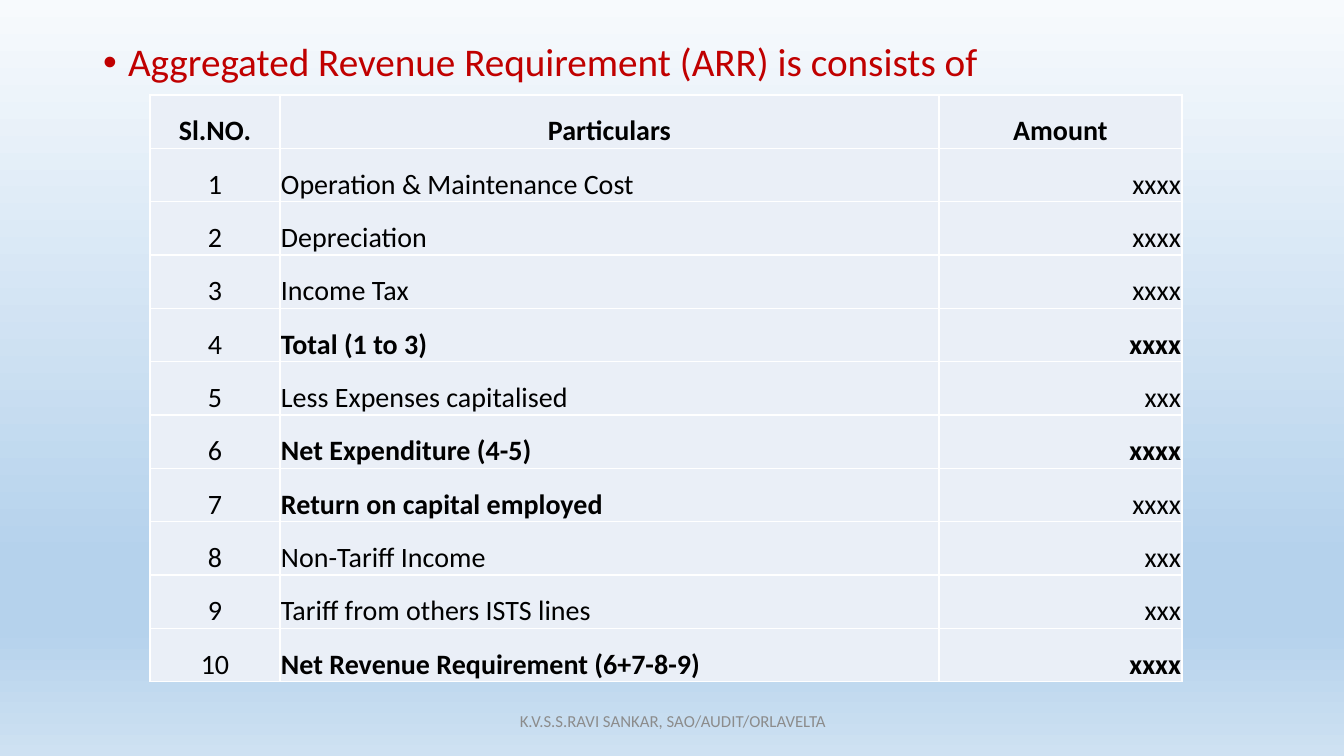
from dataclasses import dataclass

from lxml.etree import SubElement
from pptx import Presentation
from pptx.dml.color import RGBColor
from pptx.enum.text import MSO_ANCHOR, PP_ALIGN
from pptx.oxml.ns import qn
from pptx.util import Pt

HEADING = "Aggregated Revenue Requirement (ARR) is consists of"
COLUMNS = [
    ("Sl.NO.", 130, PP_ALIGN.CENTER),
    ("Particulars", 659, PP_ALIGN.LEFT),
    ("Amount", 243, PP_ALIGN.RIGHT),
]
ITEMS = [
    ("Operation & Maintenance Cost", "xxxx"),
    ("Depreciation", "xxxx"),
    ("Income Tax", "xxxx"),
    ("Total (1 to 3)", "xxxx"),
    ("Less Expenses capitalised", "xxx"),
    ("Net Expenditure (4-5)", "xxxx"),
    ("Return on capital employed", "xxxx"),
    ("Non-Tariff Income", "xxx"),
    ("Tariff from others ISTS lines", "xxx"),
    ("Net Revenue Requirement (6+7-8-9)", "xxxx"),
]
BOLD_PARTICULARS = {4, 6, 7, 10}
BOLD_AMOUNTS = {4, 6, 10}
FOOTER = "K.V.S.S.RAVI SANKAR, SAO/AUDIT/ORLAVELTA"

SLIDE_SIZE = (1344, 756)
HEADING_BOX = (93, 38, 1159, 684)
TABLE_BOX = (150, 95, 1032, 587)
FOOTER_BOX = (446, 701, 454, 40)


@dataclass(frozen=True)
class Theme:
    font: str = "Calibri"
    heading: str = "C00000"
    text: str = "000000"
    footer: str = "8C8C8C"
    cell: str = "EAEFF7"
    border: str = "FFFFFF"
    sky: tuple = ((0, "F7FAFD"), (74, "B5D2EC"), (83, "B5D2EC"), (100, "CEE1F2"))
    heading_size: int = 28
    table_size: int = 20
    footer_size: int = 12


THEME = Theme()


def px(length):
    return round(length * 914400 / 100.8)


def write(paragraph, text, size, color, align=PP_ALIGN.LEFT, bold=False):
    paragraph.text = text
    paragraph.alignment = align
    font = paragraph.runs[0].font
    font.name, font.size, font.bold = THEME.font, Pt(size), bold
    font.color.rgb = RGBColor.from_string(color)


def paint_background(slide):
    fill = slide.background.fill
    fill.gradient()
    fill.gradient_angle = 270
    stops = next(slide.element.iter(qn("a:gsLst")))
    for stop in list(stops):
        stops.remove(stop)
    for percent, color in THEME.sky:
        stop = SubElement(stops, qn("a:gs"), pos=str(percent * 1000))
        SubElement(stop, qn("a:srgbClr"), val=color)


def add_heading(slide):
    body = slide.placeholders[1]
    body.left, body.top, body.width, body.height = map(px, HEADING_BOX)
    heading = body.text_frame.paragraphs[0]
    write(heading, HEADING, THEME.heading_size, THEME.heading)
    heading.line_spacing = 0.9
    heading.space_before = Pt(10)
    properties = heading._p.get_or_add_pPr()
    properties.set("marL", str(px(25)))
    properties.set("indent", str(-px(25)))
    SubElement(properties, qn("a:buFont"), typeface="Arial")
    SubElement(properties, qn("a:buChar"), char="•")


def style_cell(cell):
    cell.margin_left = cell.margin_right = cell.margin_top = px(1)
    cell.margin_bottom = 0
    cell.vertical_anchor = MSO_ANCHOR.BOTTOM
    properties = cell._tc.get_or_add_tcPr()
    for side in ("lnL", "lnR", "lnT", "lnB"):
        border = SubElement(properties, qn(f"a:{side}"), w=str(Pt(1)))
        SubElement(SubElement(border, qn("a:solidFill")), qn("a:srgbClr"), val=THEME.border)
    cell.fill.solid()
    cell.fill.fore_color.rgb = RGBColor.from_string(THEME.cell)


def add_requirement_table(slide):
    rows = [[title for title, _, _ in COLUMNS]]
    rows += [(str(n), *item) for n, item in enumerate(ITEMS, 1)]
    table = slide.shapes.add_table(len(rows), len(COLUMNS), *map(px, TABLE_BOX)).table
    for column, (_, width, _) in zip(table.columns, COLUMNS):
        column.width = px(width)
    for number, row in enumerate(rows):
        header = number == 0
        bolds = (header, header or number in BOLD_PARTICULARS, header or number in BOLD_AMOUNTS)
        for c, (text, bold) in enumerate(zip(row, bolds)):
            cell = table.cell(number, c)
            style_cell(cell)
            align = PP_ALIGN.CENTER if header else COLUMNS[c][2]
            write(cell.text_frame.paragraphs[0], text, THEME.table_size, THEME.text, align, bold)


def add_footer(slide):
    frame = slide.shapes.add_textbox(*map(px, FOOTER_BOX)).text_frame
    frame.word_wrap = True
    frame.vertical_anchor = MSO_ANCHOR.MIDDLE
    write(frame.paragraphs[0], FOOTER, THEME.footer_size, THEME.footer, PP_ALIGN.CENTER)


def main():
    deck = Presentation()
    deck.slide_width, deck.slide_height = map(px, SLIDE_SIZE)
    slide = deck.slides.add_slide(deck.slide_layouts[1])
    title = slide.shapes.title.element
    title.getparent().remove(title)
    paint_background(slide)
    add_heading(slide)
    add_requirement_table(slide)
    add_footer(slide)
    deck.save("out.pptx")


if __name__ == "__main__":
    main()
